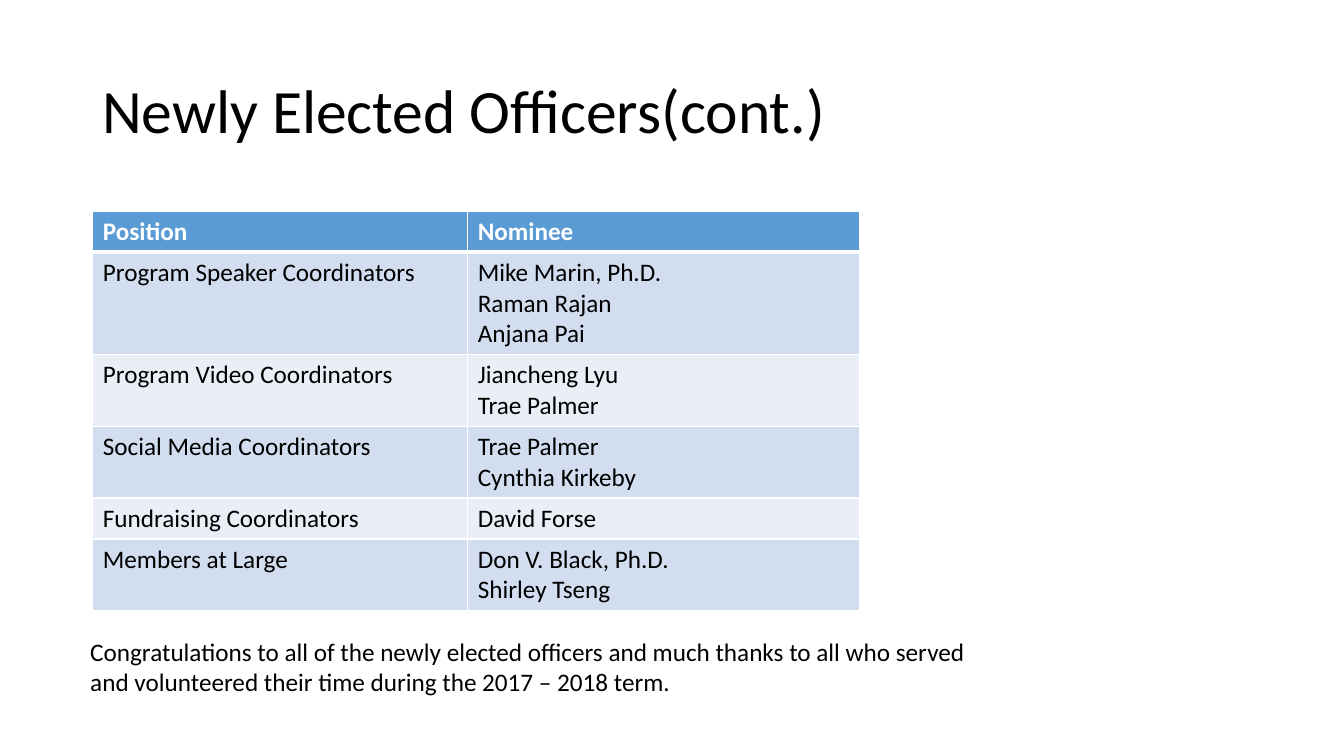
from lxml import etree
from pptx import Presentation
from pptx.dml.color import RGBColor
from pptx.enum.text import MSO_ANCHOR
from pptx.oxml.ns import qn
from pptx.util import Pt

TOP = MSO_ANCHOR.TOP
MIDDLE = MSO_ANCHOR.MIDDLE

BLACK = RGBColor(0x00, 0x00, 0x00)
WHITE = RGBColor(0xFF, 0xFF, 0xFF)
HEADER_BLUE = RGBColor(0x5B, 0x9B, 0xD5)
BAND_DARK = RGBColor(0xD2, 0xDE, 0xEF)
BAND_LIGHT = RGBColor(0xEA, 0xEF, 0xF7)

FONT = "Calibri"
LINE_HEIGHT = 22
CELL_PADDING = 7.2
COLUMN_WIDTHS = (267.8, 280)

OFFICERS = [
    ("Position", ["Nominee"]),
    ("Program Speaker Coordinators", ["Mike Marin, Ph.D.", "Raman Rajan", "Anjana Pai"]),
    ("Program Video Coordinators", ["Jiancheng Lyu", "Trae Palmer"]),
    ("Social Media Coordinators", ["Trae Palmer", "Cynthia Kirkeby"]),
    ("Fundraising Coordinators", ["David Forse"]),
    ("Members at Large", ["Don V. Black, Ph.D.", "Shirley Tseng"]),
]


def write_text(frame, lines, size=18, color=BLACK, bold=False, spacing=1.0):
    for index, line in enumerate(lines):
        paragraph = frame.add_paragraph() if index else frame.paragraphs[0]
        paragraph.line_spacing = spacing
        run = paragraph.add_run()
        run.text = line
        run.font.name = FONT
        run.font.size = Pt(size)
        run.font.bold = bold
        run.font.color.rgb = color


def add_text(slide, text, left, top, width, height, anchor=TOP, **text_format):
    frame = slide.shapes.add_textbox(Pt(left), Pt(top), Pt(width), Pt(height)).text_frame
    frame.word_wrap = True
    frame.vertical_anchor = anchor
    write_text(frame, [text], **text_format)


def set_borders(cell, top, bottom):
    properties = cell._tc.get_or_add_tcPr()
    widths = {"a:lnL": 1, "a:lnR": 1, "a:lnT": top, "a:lnB": bottom}
    for tag, width in widths.items():
        border = etree.SubElement(properties, qn(tag), w=str(Pt(width)))
        fill = etree.SubElement(border, qn("a:solidFill"))
        etree.SubElement(fill, qn("a:srgbClr"), val=str(WHITE))


def add_officer_table(slide, left, top):
    heights = [LINE_HEIGHT * len(nominees) + CELL_PADDING for _, nominees in OFFICERS]
    table = slide.shapes.add_table(
        len(OFFICERS), len(COLUMN_WIDTHS), Pt(left), Pt(top),
        Pt(sum(COLUMN_WIDTHS)), Pt(sum(heights)),
    ).table
    for column, width in zip(table.columns, COLUMN_WIDTHS):
        column.width = Pt(width)
    for index, (position, nominees) in enumerate(OFFICERS):
        is_header = index == 0
        band = BAND_DARK if index % 2 else BAND_LIGHT
        table.rows[index].height = Pt(heights[index])
        for cell, lines in zip(table.rows[index].cells, ([position], nominees)):
            write_text(cell.text_frame, lines,
                       color=WHITE if is_header else BLACK, bold=is_header)
            set_borders(cell, top=3 if index == 1 else 1, bottom=3 if is_header else 1)
            cell.fill.solid()
            cell.fill.fore_color.rgb = HEADER_BLUE if is_header else band


def main():
    presentation = Presentation()
    presentation.slide_width = Pt(960)
    presentation.slide_height = Pt(540)
    slide = presentation.slides.add_slide(presentation.slide_layouts[6])
    add_text(slide, "Newly Elected Officers(cont.)", 66, 28.8, 828, 104.4,
             anchor=MIDDLE, size=44, spacing=0.9)
    add_officer_table(slide, 66.3, 151)
    add_text(slide, "Congratulations to all of the newly elected officers and much thanks "
             "to all who served and volunteered their time during the 2017 – 2018 term.",
             57.4, 450.7, 662.4, 51)
    presentation.save("out.pptx")


if __name__ == "__main__":
    main()
